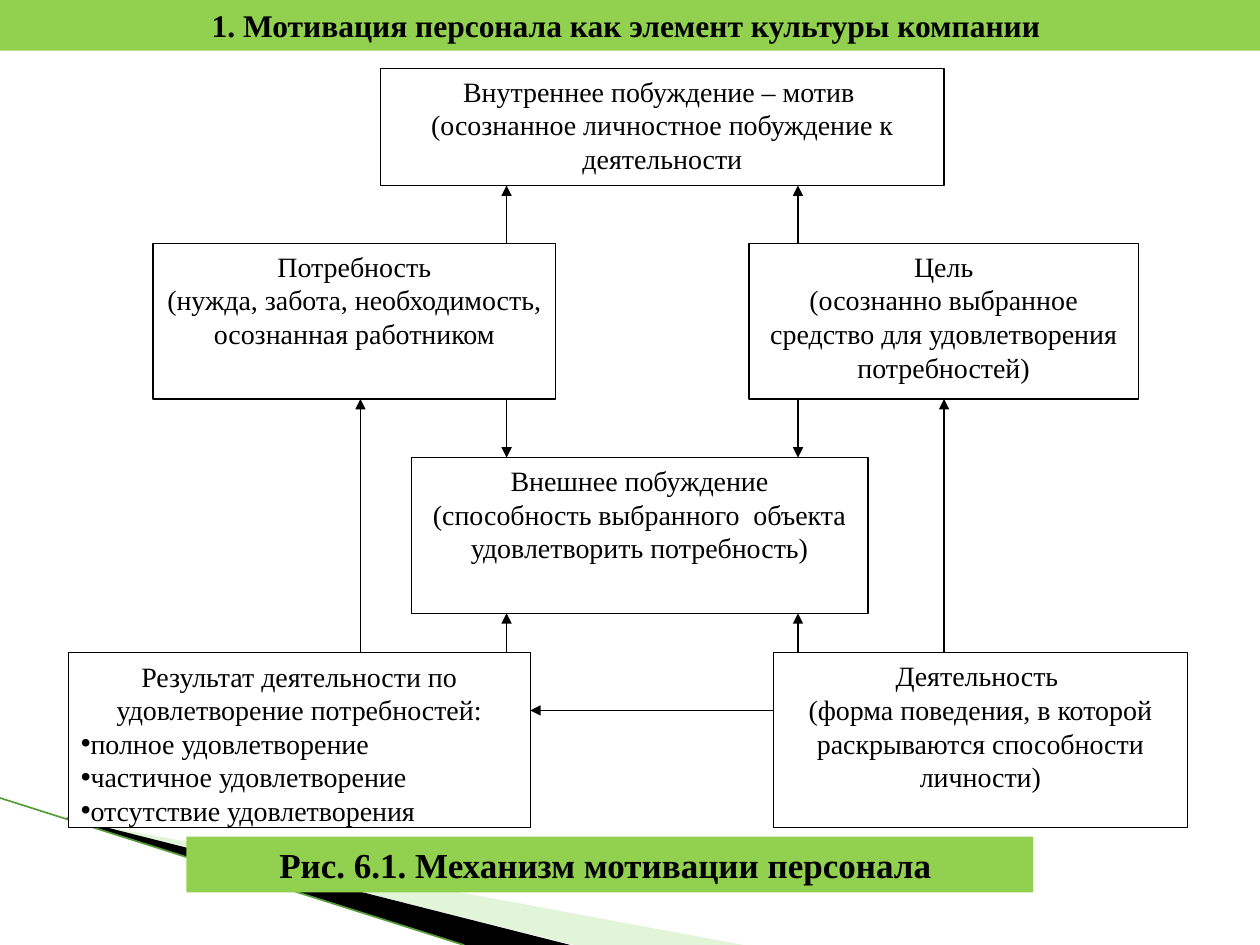
from lxml import etree
from pptx import Presentation
from pptx.dml.color import RGBColor
from pptx.enum.shapes import MSO_CONNECTOR, MSO_SHAPE
from pptx.enum.text import MSO_ANCHOR, MSO_AUTO_SIZE, PP_ALIGN
from pptx.oxml.ns import qn
from pptx.util import Pt

RECTANGLE = MSO_SHAPE.RECTANGLE
STRAIGHT = MSO_CONNECTOR.STRAIGHT
TOP, MIDDLE = MSO_ANCHOR.TOP, MSO_ANCHOR.MIDDLE
CENTER, LEFT = PP_ALIGN.CENTER, PP_ALIGN.LEFT
NO_AUTOFIT = MSO_AUTO_SIZE.NONE

COLORS = {"ink": "000000", "paper": "FFFFFF", "band": "92D050",
          "pale": "B8E7A1", "stripe": "549E39"}
FONT = "Times New Roman"


class DiagramSlide:
    """Draws the parts of a boxes-and-arrows slide in one style."""

    def __init__(self, slide):
        self.slide = slide
        self.shapes = slide.shapes

    def color(self, name):
        return RGBColor.from_string(COLORS[name])

    def paint(self, shape, fill, outline=None):
        shape.fill.solid()
        shape.fill.fore_color.rgb = self.color(fill)
        if outline:
            shape.line.color.rgb = self.color(outline)
            shape.line.width = Pt(0.75)
        else:
            shape.line.fill.background()

    def place(self, shape, left, top, width, height):
        shape.left, shape.top = Pt(left), Pt(top)
        shape.width, shape.height = Pt(width), Pt(height)

    def set_text(self, shape, lines, size=16, bold=False, anchor=TOP, bullets_from=None):
        frame = shape.text_frame
        frame.word_wrap = True
        frame.auto_size = NO_AUTOFIT
        frame.vertical_anchor = anchor
        frame.text = "\n".join(lines)
        for index, paragraph in enumerate(frame.paragraphs):
            bulleted = bullets_from is not None and index >= bullets_from
            properties = paragraph._p.get_or_add_pPr()
            properties.set("marL", "0")
            properties.set("indent", "0")
            if bulleted:
                etree.SubElement(properties, qn("a:buChar")).set("char", "•")
            else:
                etree.SubElement(properties, qn("a:buNone"))
            paragraph.alignment = LEFT if bulleted else CENTER
            paragraph.space_before = Pt(0)
            paragraph.font.name = FONT
            paragraph.font.size = Pt(size)
            paragraph.font.bold = bold
            paragraph.font.color.rgb = self.color("ink")

    def title(self, text, bounds):
        heading = self.shapes.title
        self.place(heading, *bounds)
        self.paint(heading, "band")
        self.set_text(heading, [text], 18, True, MIDDLE)

    def rectangle(self, bounds, fill, outline=None):
        shape = self.shapes.add_shape(RECTANGLE, *map(Pt, bounds))
        shape.shadow.inherit = False
        self.paint(shape, fill, outline)
        return shape

    def box(self, bounds, lines):
        self.set_text(self.rectangle(bounds, "paper", "ink"), lines)

    def list_box(self, bounds, heading, items):
        body = self.slide.placeholders[1]
        self.shapes._spTree.append(body._element)
        self.place(body, *bounds)
        self.paint(body, "paper", "ink")
        self.set_text(body, [heading, *items], bullets_from=1)

    def caption(self, bounds, text):
        self.set_text(self.rectangle(bounds, "band"), [text], 20, True, MIDDLE)

    def line(self, start, end, color="ink", width=0.75):
        connector = self.shapes.add_connector(STRAIGHT, *map(Pt, (*start, *end)))
        connector.line.color.rgb = self.color(color)
        connector.line.width = Pt(width)
        etree.SubElement(connector._element.spPr, qn("a:effectLst"))
        return connector

    def arrow(self, start, end):
        outline = self.line(start, end).line._get_or_add_ln()
        etree.SubElement(outline, qn("a:tailEnd")).set("type", "triangle")

    def wedge(self, corners, fill, opacity=100):
        first, *rest = [(Pt(x), Pt(y)) for x, y in corners]
        builder = self.shapes.build_freeform(*first)
        builder.add_line_segments(rest)
        shape = builder.convert_to_shape()
        shape.shadow.inherit = False
        self.paint(shape, fill)
        if opacity < 100:
            rgb = shape._element.spPr.find(qn("a:solidFill"))[0]
            etree.SubElement(rgb, qn("a:alpha")).set("val", str(opacity * 1000))


def main():
    presentation = Presentation()
    presentation.slide_width, presentation.slide_height = Pt(720), Pt(540)
    page = DiagramSlide(presentation.slides.add_slide(presentation.slide_layouts[1]))

    page.wedge([(39.5, 468.5), (425, 540), (328, 540), (39.5, 468)], "pale", 40)
    page.wedge([(38, 467), (326, 540), (266, 540), (39, 468)], "ink")
    page.line((0, 456), (265, 540), "stripe", 0.95)
    page.title("1. Мотивация персонала как элемент культуры компании ", (0, 0, 720, 29))

    motive_top, motive_height = 39, 67
    middle_top, external_top, middle_height = 139, 261.5, 89
    bottom_top, bottom_height = 373, 100
    motive_bottom = motive_top + motive_height
    middle_bottom = middle_top + middle_height
    external_bottom = external_top + middle_height
    result_left, result_width, activity_left = 39, 264, 442

    page.box((217.5, motive_top, 322, motive_height),
             ["Внутреннее побуждение – мотив ",
              "(осознанное личностное побуждение к деятельности"])
    page.box((87.5, middle_top, 230, middle_height),
             ["Потребность", "(нужда, забота, необходимость, осознанная работником"])
    page.box((428, middle_top, 222.5, middle_height),
             ["Цель", "(осознанно выбранное средство для удовлетворения потребностей)"])
    page.box((235, external_top, 261, middle_height),
             ["Внешнее побуждение",
              "(способность выбранного  объекта удовлетворить потребность)"])
    page.list_box((result_left, bottom_top, result_width, bottom_height),
                  "Результат деятельности по удовлетворение потребностей:",
                  ["полное удовлетворение", "частичное удовлетворение",
                   "отсутствие удовлетворения"])
    page.box((activity_left, bottom_top, 236.5, bottom_height),
             ["Деятельность ",
              "(форма поведения, в которой раскрываются способности личности)"])

    for inner_x, outer_x in ((289.5, 206), (456, 539.5)):
        page.arrow((inner_x, middle_top), (inner_x, motive_bottom))
        page.arrow((inner_x, middle_bottom), (inner_x, external_top))
        page.arrow((inner_x, bottom_top), (inner_x, external_bottom))
        page.arrow((outer_x, bottom_top), (outer_x, middle_bottom))
    page.arrow((activity_left, 406), (result_left + result_width, 406))

    page.caption((106.5, 478, 484, 32), "Рис. 6.1. Механизм мотивации персонала ")
    presentation.save("out.pptx")


if __name__ == "__main__":
    main()
